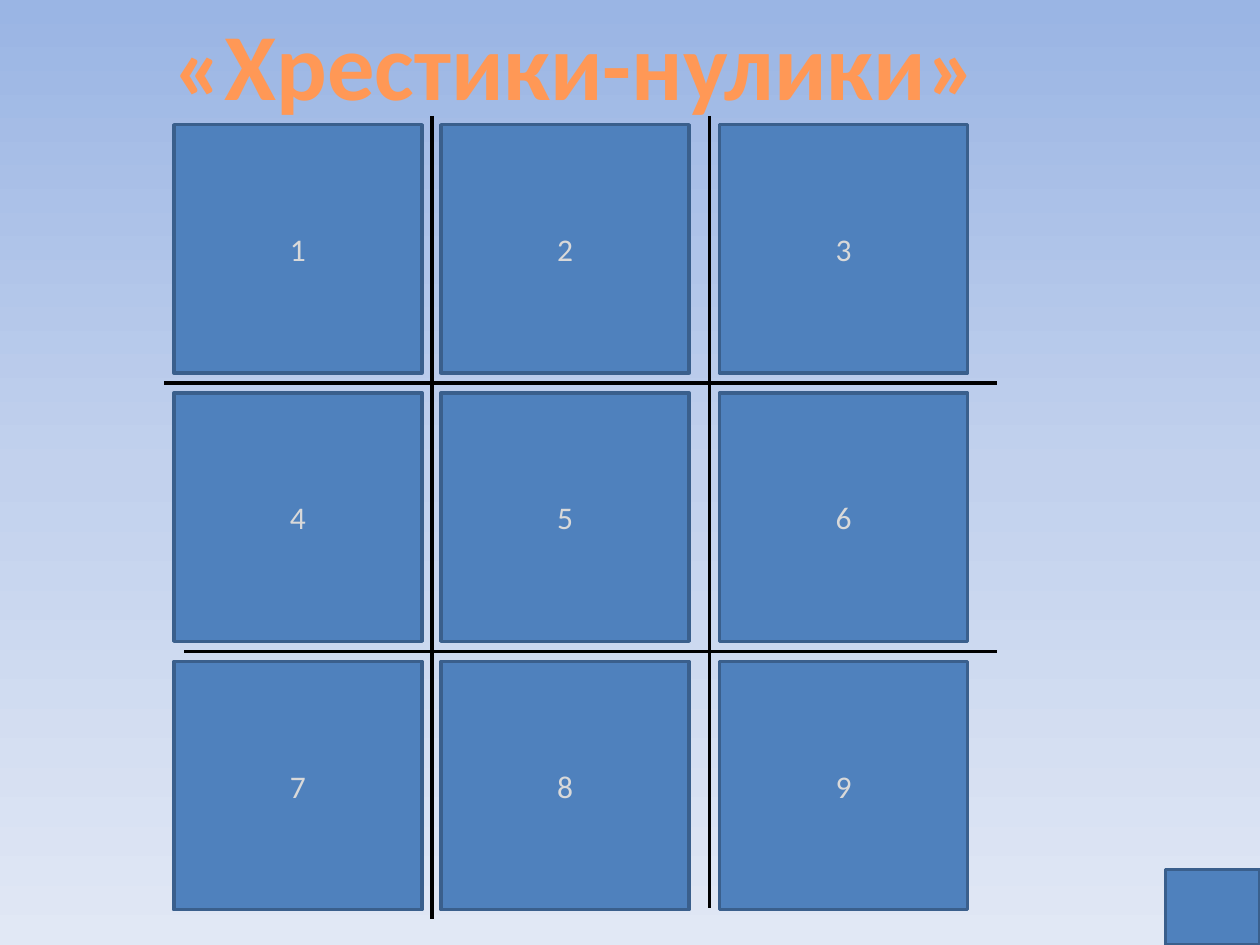
from copy import deepcopy

from pptx import Presentation
from pptx.dml.color import RGBColor
from pptx.enum.shapes import MSO_CONNECTOR, MSO_SHAPE
from pptx.enum.text import MSO_ANCHOR, MSO_AUTO_SIZE, PP_ALIGN
from pptx.oxml.ns import qn
from pptx.util import Inches, Pt

COLORS = {
    "square": "4F81BD",
    "border": "3A5F8C",
    "digit": "D9D9D9",
    "grid": "000000",
}
BACKGROUND_STOPS = [(0, "9AB5E4"), (0.5, "C2D1ED"), (1, "E1E8F5")]
TITLE_STOPS = [(0, "9D4700"), (0.78, "FF9856"), (1, "FFF5F1")]


class Board:
    font = "Calibri"
    line_width = Pt(2)

    def __init__(self, slide):
        self.slide = slide

    def color(self, name):
        return RGBColor.from_string(COLORS[name])

    def gradient(self, fill, owner, stops):
        fill.gradient()
        fill.gradient_angle = 270
        stop_list = next(owner.iter(qn("a:gsLst")))
        while len(stop_list) < len(stops):
            stop_list.append(deepcopy(stop_list[-1]))
        for stop, (position, color) in zip(fill.gradient_stops, stops):
            stop.position = position
            stop.color.rgb = RGBColor.from_string(color)

    def background(self, stops):
        self.gradient(self.slide.background.fill, self.slide.element, stops)

    def text(self, shape, text, size):
        paragraph = shape.text_frame.paragraphs[0]
        paragraph.alignment = PP_ALIGN.CENTER
        run = paragraph.add_run()
        run.text = text
        run.font.name = self.font
        run.font.size = Pt(size)
        return run

    def line(self, x1, y1, x2, y2):
        connector = self.slide.shapes.add_connector(
            MSO_CONNECTOR.STRAIGHT, Inches(x1), Inches(y1), Inches(x2), Inches(y2)
        )
        connector.line.color.rgb = self.color("grid")
        connector.line.width = self.line_width
        properties = connector.element.spPr
        properties.append(properties.makeelement(qn("a:effectLst"), {}))

    def square(self, left, top, width, height, label=None):
        shape = self.slide.shapes.add_shape(
            MSO_SHAPE.RECTANGLE, Inches(left), Inches(top), Inches(width), Inches(height)
        )
        shape.shadow.inherit = False
        shape.fill.solid()
        shape.fill.fore_color.rgb = self.color("square")
        shape.line.color.rgb = self.color("border")
        shape.line.width = self.line_width
        if label:
            shape.text_frame.vertical_anchor = MSO_ANCHOR.MIDDLE
            self.text(shape, label, 18).font.color.rgb = self.color("digit")

    def title(self, text, left, top, width, height):
        shape = self.slide.shapes.add_textbox(
            Inches(left), Inches(top), Inches(width), Inches(height)
        )
        shape.text_frame.word_wrap = False
        shape.text_frame.auto_size = MSO_AUTO_SIZE.SHAPE_TO_FIT_TEXT
        run = self.text(shape, text, 54)
        run.font.bold = True
        self.gradient(run.font.fill, shape.element, TITLE_STOPS)


def main():
    presentation = Presentation()
    presentation.slide_width = Inches(10)
    presentation.slide_height = Inches(7.5)
    board = Board(presentation.slides.add_slide(presentation.slide_layouts[6]))
    board.background(BACKGROUND_STOPS)

    for x, bottom in ((3.43, 7.29), (5.63, 7.21)):
        board.line(x, 0.92, x, bottom)
    for y, left in ((3.04, 1.3), (5.17, 1.46)):
        board.line(7.91, y, left, y)

    side = 1.97
    columns = (1.38, 3.5, 5.71)
    for row in range(3):
        for column, left in enumerate(columns):
            number = row * len(columns) + column + 1
            board.square(left, 0.99 + row * 2.13, side, side, str(number))

    board.title("«Хрестики-нулики»", 1.25, 0, 6.64, 1.01)
    board.square(9.25, 6.9, 0.75, 0.6)
    presentation.save("out.pptx")


if __name__ == "__main__":
    main()
